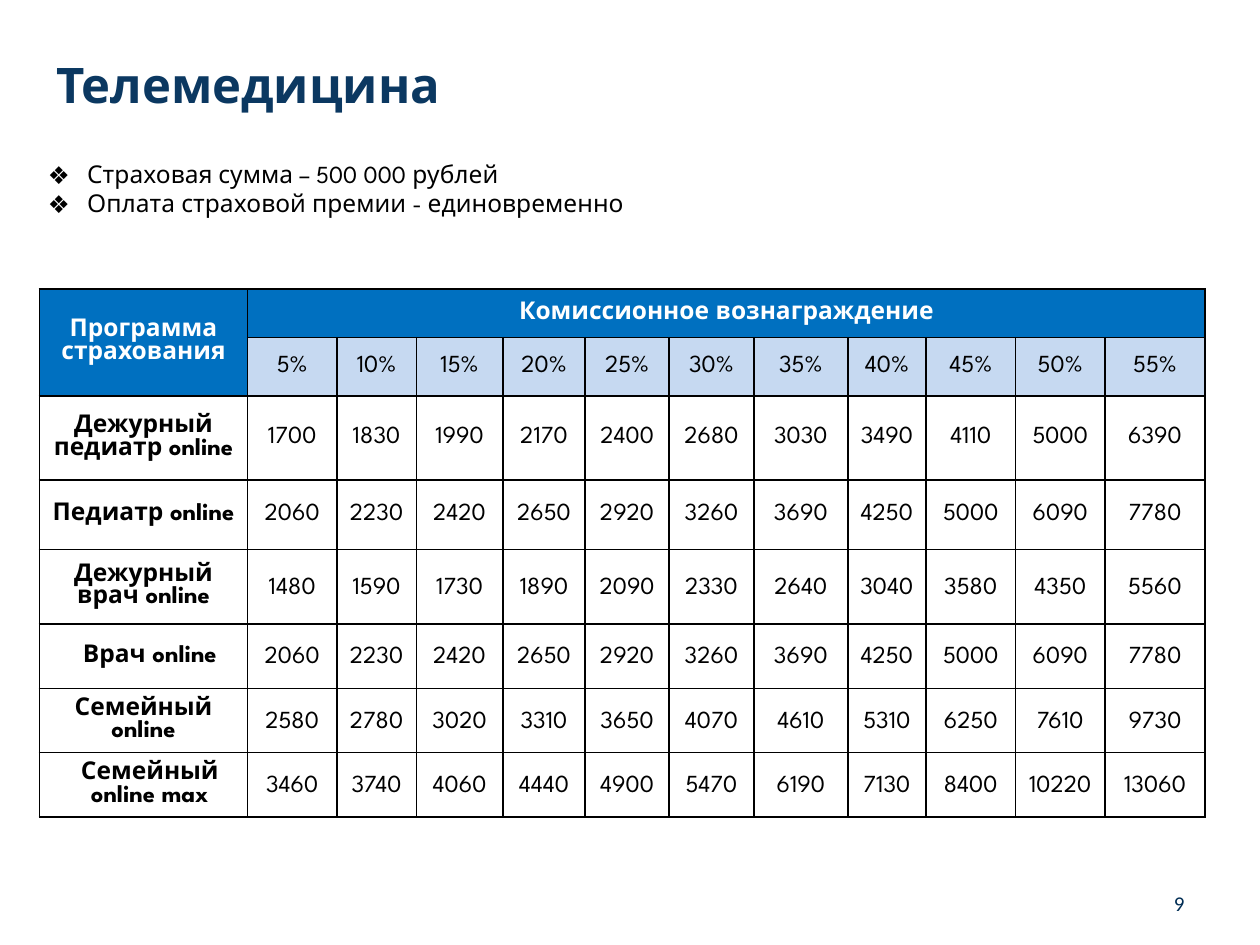
from lxml import etree
from pptx import Presentation
from pptx.dml.color import RGBColor
from pptx.enum.text import MSO_ANCHOR, PP_ALIGN
from pptx.oxml.ns import qn
from pptx.util import Pt

TITLE = "Телемедицина"
TERMS = ["Страховая сумма – 500 000 рублей",
         "Оплата страховой премии - единовременно"]
HEADS = ["Программа страхования", "Комиссионное вознаграждение"]
RATES = [f"{rate}%" for rate in range(5, 60, 5)]
# name, left indent, side inset, prices by rate
PLANS = [
    ("Дежурный педиатр online", 0, 5,
     [1700, 1830, 1990, 2170, 2400, 2680, 3030, 3490, 4110, 5000, 6390]),
    ("Педиатр online", 0, 0,
     [2060, 2230, 2420, 2650, 2920, 3260, 3690, 4250, 5000, 6090, 7780]),
    ("Дежурный врач online", 0, 5,
     [1480, 1590, 1730, 1890, 2090, 2330, 2640, 3040, 3580, 4350, 5560]),
    ("Врач online", 7.2, 0,
     [2060, 2230, 2420, 2650, 2920, 3260, 3690, 4250, 5000, 6090, 7780]),
    ("Семейный online", 0, 5,
     [2580, 2780, 3020, 3310, 3650, 4070, 4610, 5310, 6250, 7610, 9730]),
    ("Семейный online max", 7.2, 0,
     [3460, 3740, 4060, 4440, 4900, 5470, 6190, 7130, 8400, 10220, 13060]),
]
WIDTHS = [119, 51, 45.4, 49.5, 47, 48, 48.4, 53.8, 44.6, 51.3, 51, 57.3]
HEIGHTS = [28, 33.2, 48.2, 39.6, 42.6, 36.8, 36.8, 36.8]
FONT = "League Spartan"


def rgb(code):
    return RGBColor.from_string(code)


def style(para, size, color, bold=False, name=FONT, align=PP_ALIGN.LEFT):
    para.alignment = align
    font = para.font
    font.size, font.bold, font.name = Pt(size), bold, name
    font.color.rgb = rgb(color)


def place(shape, *box):
    shape.left, shape.top, shape.width, shape.height = map(Pt, box)


def indent(para, left, first=0):
    props = para._p.get_or_add_pPr()
    props.set("marL", str(Pt(left)))
    props.set("indent", str(Pt(first)))
    return props


def border(cell):
    props = cell._tc.get_or_add_tcPr()
    for spot, side in enumerate(("lnL", "lnR", "lnT", "lnB")):
        line = etree.Element(qn(f"a:{side}"), w=str(Pt(1)))
        fill = etree.SubElement(line, qn("a:solidFill"))
        etree.SubElement(fill, qn("a:srgbClr"), val="000000")
        props.insert(spot, line)


def write(cell, label, color="000000", bold=False, fill=None, side=5, edge=0):
    cell.text = str(label)
    cell.vertical_anchor = MSO_ANCHOR.MIDDLE
    cell.margin_left = cell.margin_right = Pt(side)
    cell.margin_top = cell.margin_bottom = Pt(edge)
    if fill:
        cell.fill.solid()
        cell.fill.fore_color.rgb = rgb(fill)
    para = cell.text_frame.paragraphs[0]
    style(para, 14, color, bold, align=PP_ALIGN.CENTER)
    return para


deck = Presentation()
deck.slide_width, deck.slide_height = Pt(720), Pt(540)
slide = deck.slides.add_slide(deck.slide_layouts[5])

title = slide.shapes.title
place(title, 25.2, 13, 504.7, 69.8)
title.text_frame.text = TITLE
title.text_frame.vertical_anchor = MSO_ANCHOR.MIDDLE
style(title.text_frame.paragraphs[0], 28, "0B3861", True)

frame = slide.shapes.add_table(len(HEIGHTS), len(WIDTHS), Pt(22.5), Pt(165),
                               Pt(sum(WIDTHS)), Pt(sum(HEIGHTS)))
table = frame.table
for col, width in zip(table.columns, WIDTHS):
    col.width = Pt(width)
for row, height in zip(table.rows, HEIGHTS):
    row.height = Pt(height)
for cell in table.iter_cells():
    cell.fill.background()
    border(cell)

table.cell(0, 0).merge(table.cell(1, 0))
table.cell(0, 1).merge(table.cell(0, len(RATES)))
for col, head in enumerate(HEADS):
    write(table.cell(0, col), head, "FFFFFF", True, "0070C0", 7.2, 3.6)
for col, rate in enumerate(RATES, 1):
    write(table.cell(1, col), rate, fill="C6D9F1")
for row, (name, left, side, prices) in enumerate(PLANS, 2):
    indent(write(table.cell(row, 0), name, bold=True, side=side), left)
    for col, price in enumerate(prices, 1):
        para = write(table.cell(row, col), price)
        if row > 3:
            para.line_spacing = 1.15

terms = slide.shapes.add_textbox(Pt(20.2), Pt(87.1), Pt(394.6), Pt(41))
terms.text_frame.word_wrap = True
for spot, term in enumerate(TERMS):
    body = terms.text_frame
    para = body.add_paragraph() if spot else body.paragraphs[0]
    para.text = term
    props = indent(para, 22.5, -22.5)
    etree.SubElement(props, qn("a:buFont"), typeface="Noto Sans Symbols")
    etree.SubElement(props, qn("a:buChar"), char="❖")
    style(para, 14, "000000", align=PP_ALIGN.JUSTIFY)

page = slide.shapes.add_textbox(Pt(516.2), Pt(501.8), Pt(167.8), Pt(28.8))
page.text_frame.word_wrap = True
page.text_frame.vertical_anchor = MSO_ANCHOR.MIDDLE
page.text_frame.text = "9"
style(page.text_frame.paragraphs[0], 12, "002D54", name="Calibri",
      align=PP_ALIGN.RIGHT)

deck.save("out.pptx")
